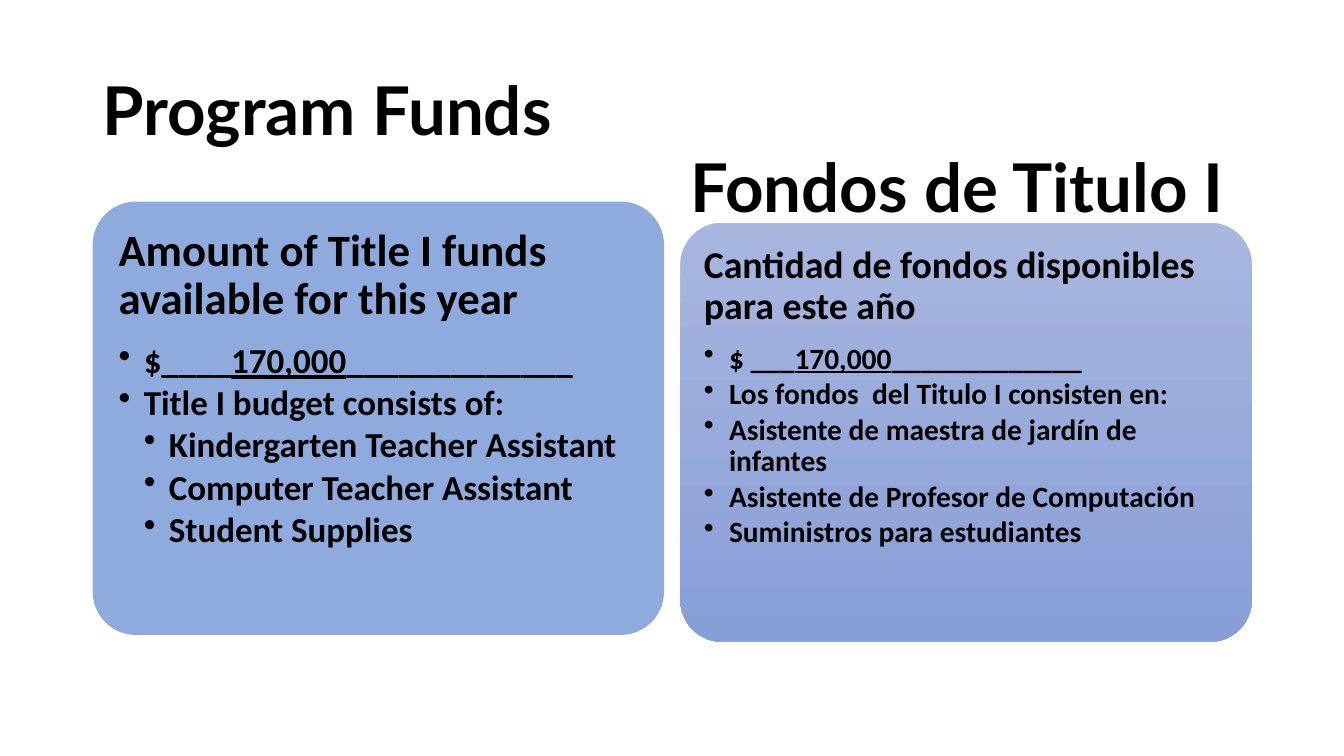
from dataclasses import dataclass

from lxml.etree import SubElement
from pptx import Presentation
from pptx.dml.color import RGBColor
from pptx.enum.shapes import MSO_SHAPE
from pptx.enum.text import MSO_ANCHOR
from pptx.oxml.ns import qn
from pptx.shapes.autoshape import Shape
from pptx.slide import Slide
from pptx.text.text import _Paragraph as Para
from pptx.util import Pt

HUES = {"ink": "000000", "blue": "8FAADC", "pale": "A8B7DF", "deep": "889ED7"}
SUM = "170,000"
INDENT = 18

Box = tuple[float, float, float, float]


@dataclass(frozen=True)
class Title:
    text: str
    box: Box
    anchor: MSO_ANCHOR


@dataclass(frozen=True)
class Card:
    box: Box
    hues: tuple[str, ...]
    pad: float
    inset: float
    head: str
    big: float
    small: float
    items: tuple[tuple[int, str], ...]


TITLES = (
    Title("Program Funds", (66, 28.8, 414, 104.4), MSO_ANCHOR.MIDDLE),
    Title("Fondos de Titulo I", (486, 100, 473.5, 65.5), MSO_ANCHOR.TOP),
)

CARDS = (
    Card((66.2, 144, 408.2, 309.6), ("blue",), 9, 9.5,
         "Amount of Title I funds available for this year", 32, 25, (
             (1, "$____170,000_____________"),
             (1, "Title I budget consists of:"),
             (2, "Kindergarten Teacher Assistant"),
             (2, "Computer Teacher Assistant"),
             (2, "Student Supplies"))),
    Card((486, 159, 408.2, 299.5), ("pale", "deep"), 8.8, 8,
         "Cantidad de fondos disponibles para este año", 27, 21, (
             (1, "$ ___170,000_____________"),
             (1, "Los fondos  del Titulo I consisten en:"),
             (1, "Asistente de maestra de jardín de infantes"),
             (1, "Asistente de Profesor de Computación"),
             (1, "Suministros para estudiantes"))),
)


def color(name: str) -> RGBColor:
    return RGBColor.from_string(HUES[name])


def style(para: Para, size: float, face: str) -> None:
    for run in para.runs:
        run.font.name = face
        run.font.size = Pt(size)
        run.font.bold = True
        run.font.color.rgb = color("ink")


def add_text(slide: Slide, box: Box) -> Shape:
    shape = slide.shapes.add_textbox(*map(Pt, box))
    shape.text_frame.word_wrap = True
    return shape


def add_title(slide: Slide, title: Title) -> None:
    frame = add_text(slide, title.box).text_frame
    frame.vertical_anchor = title.anchor
    frame.text = title.text
    para = frame.paragraphs[0]
    if title.anchor == MSO_ANCHOR.MIDDLE:
        para.line_spacing = 0.9
    style(para, 48, "Lato")


def add_panel(slide: Slide, card: Card) -> None:
    panel = slide.shapes.add_shape(MSO_SHAPE.ROUNDED_RECTANGLE, *map(Pt, card.box))
    panel.adjustments[0] = 0.1
    panel.shadow.inherit = False
    panel.line.fill.background()
    if len(card.hues) == 1:
        panel.fill.solid()
        panel.fill.fore_color.rgb = color(card.hues[0])
        return
    panel.fill.gradient()
    panel.fill.gradient_angle = 270
    for place, (stop, hue) in enumerate(zip(panel.fill.gradient_stops, card.hues)):
        stop.position = place
        stop.color.rgb = color(hue)


def add_bullet(para: Para, level: int) -> None:
    para.level = level
    props = para._p.get_or_add_pPr()
    props.set("marL", str(Pt(INDENT * level)))
    props.set("indent", str(-Pt(INDENT)))
    SubElement(props, qn("a:buChar"), char="•")


def add_item(para: Para, text: str, level: int, size: float) -> None:
    for part in text.partition(SUM):
        if part:
            run = para.add_run()
            run.text = part
            run.font.underline = part == SUM
    para.line_spacing = 0.9
    para.space_after = Pt(round(size * 0.13, 1))
    add_bullet(para, level)
    style(para, size, "Calibri")


def add_card(slide: Slide, card: Card) -> None:
    add_panel(slide, card)
    left, top, width, height = card.box
    pad = card.pad
    frame = add_text(slide, (left + pad, top + pad,
                             width - 2 * pad, height - 2 * pad)).text_frame
    inset = Pt(card.inset)
    frame.margin_left = frame.margin_right = inset
    frame.margin_top = frame.margin_bottom = inset
    frame.text = card.head
    head = frame.paragraphs[0]
    head.line_spacing = 0.9
    head.space_after = Pt(round(card.big * 0.42, 1))
    style(head, card.big, "Calibri")
    for level, text in card.items:
        add_item(frame.add_paragraph(), text, level, card.small)


def main() -> None:
    deck = Presentation()
    deck.slide_width, deck.slide_height = Pt(960), Pt(540)
    slide = deck.slides.add_slide(deck.slide_layouts[6])
    for card in CARDS:
        add_card(slide, card)
    for title in TITLES:
        add_title(slide, title)
    deck.save("out.pptx")


if __name__ == "__main__":
    main()
